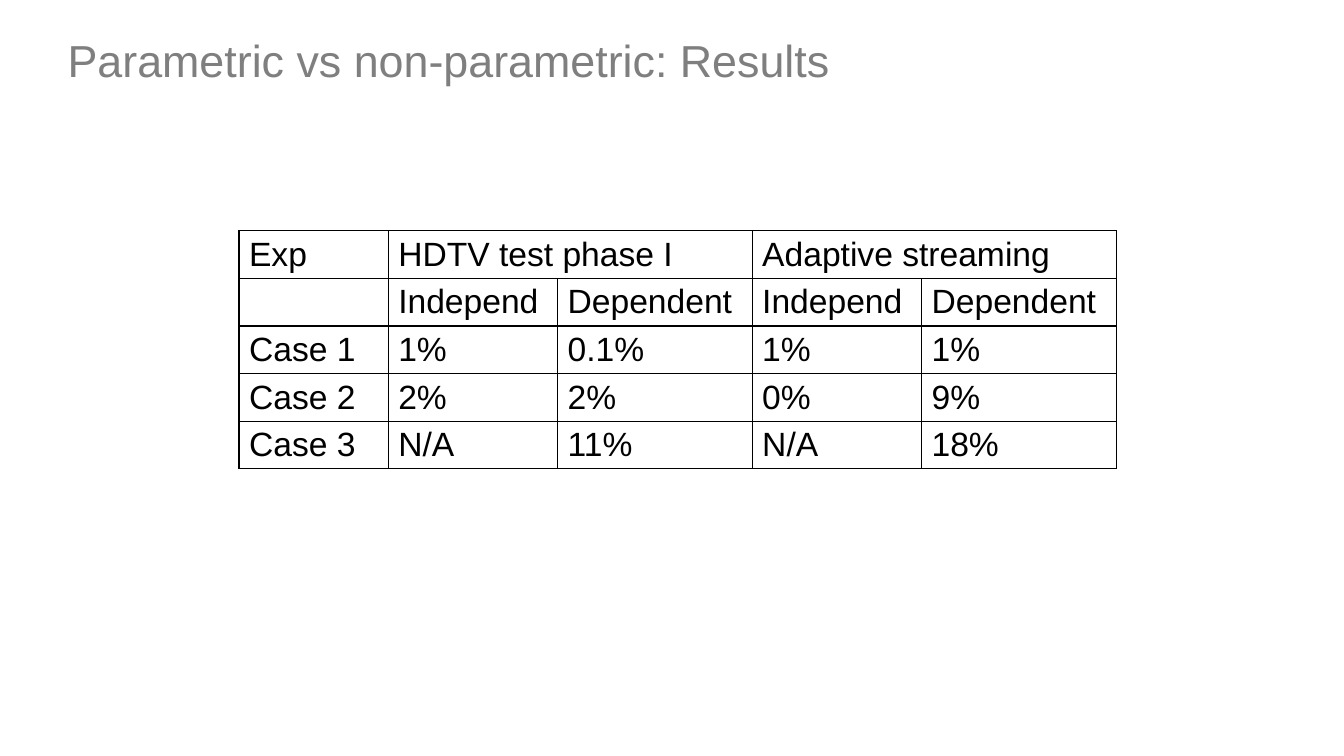
from pptx import Presentation
from pptx.dml.color import RGBColor
from pptx.enum.text import MSO_ANCHOR as Anchor, PP_ALIGN as Align
from pptx.oxml import parse_xml
from pptx.oxml.ns import nsdecls
from pptx.util import Inches, Pt

TITLE = "Parametric vs non-parametric: Results"
ROWS = [
    ("Exp", "HDTV test phase I", "", "Adaptive streaming", ""),
    ("", "Independ", "Dependent", "Independ", "Dependent"),
    ("Case 1", "1%", "0.1%", "1%", "1%"),
    ("Case 2", "2%", "2%", "0%", "9%"),
    ("Case 3", "N/A", "11%", "N/A", "18%"),
]
WIDTHS = (1.48, 1.68, 1.93, 1.68, 1.93)
HEIGHT = 0.47
GROUPS = (1, 3)
GREY, BLACK = "7F7F7F", "000000"


def style(para, size, color):
    para.alignment = Align.LEFT
    para.font.name = "Arial"
    para.font.size = Pt(size)
    para.font.color.rgb = RGBColor.from_string(color)


def border(cell, color, width):
    props = cell._tc.get_or_add_tcPr()
    for side in "LRTB":
        props.append(parse_xml(
            f'<a:ln{side} {nsdecls("a")} w="{Pt(width)}"><a:solidFill>'
            f'<a:srgbClr val="{color}"/></a:solidFill></a:ln{side}>'))


def add_title(slide):
    title = slide.shapes.title
    title.left, title.top = Inches(0.67), Inches(0.32)
    title.width, title.height = Inches(12), Inches(0.54)
    frame = title.text_frame
    frame.margin_left = frame.margin_right = 0
    frame.margin_top = frame.margin_bottom = 0
    frame.vertical_anchor = Anchor.BOTTOM
    frame.text = TITLE
    style(frame.paragraphs[0], 32, GREY)


def add_grid(slide):
    grid = slide.shapes.add_table(
        len(ROWS), len(WIDTHS), Inches(2.37), Inches(2.29),
        Inches(sum(WIDTHS)), Inches(HEIGHT * len(ROWS))).table
    grid.first_row = grid.horz_banding = False
    for col, width in zip(grid.columns, WIDTHS):
        col.width = Inches(width)
    for r, texts in enumerate(ROWS):
        grid.rows[r].height = Inches(HEIGHT)
        for c, text in enumerate(texts):
            cell = grid.cell(r, c)
            cell.text = text
            style(cell.text_frame.paragraphs[0], 24, BLACK)
            border(cell, BLACK, 1)
            cell.fill.background()
    for c in GROUPS:
        grid.cell(0, c).merge(grid.cell(0, c + 1))


def main():
    deck = Presentation()
    deck.slide_width, deck.slide_height = Inches(13.33), Inches(7.5)
    slide = deck.slides.add_slide(deck.slide_layouts[5])
    add_title(slide)
    add_grid(slide)
    deck.save("out.pptx")


if __name__ == "__main__":
    main()
